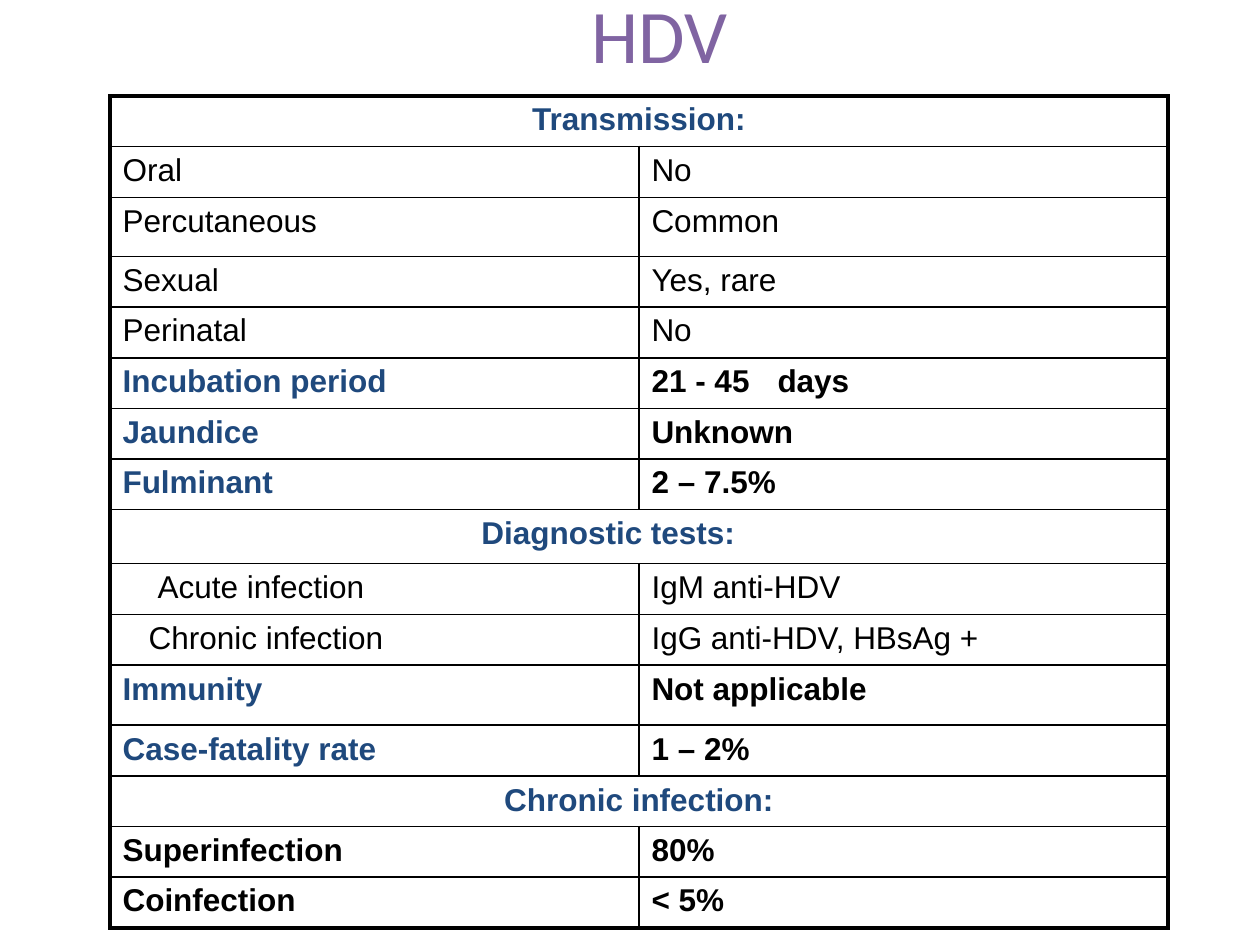
import pptx
import pptx.dml.color
import pptx.enum.text
import pptx.oxml
import pptx.oxml.ns
import pptx.util

SCALE = 914400 // 126
BLUE, BLACK, PURPLE = "1F497D", "000000", "8064A2"
THIN, THICK = 1, 2.25
CENTER = pptx.enum.text.PP_ALIGN.CENTER
MIDDLE = pptx.enum.text.MSO_ANCHOR.MIDDLE
COLUMN_WIDTH = 529
ROW_EDGES = [0, 50, 101, 160, 210, 261, 311, 361, 412,
             466, 517, 567, 627, 678, 728, 778, 829]
HEADING, DETAIL, FACT, OUTCOME = "heading", "detail", "fact", "outcome"
STYLES = {
    HEADING: (BLUE, BLUE, True),
    DETAIL: (BLACK, BLACK, False),
    FACT: (BLUE, BLACK, True),
    OUTCOME: (BLACK, BLACK, True),
}
ROWS = [
    (HEADING, "Transmission:"),
    (DETAIL, "Oral", "No"),
    (DETAIL, "Percutaneous", "Common"),
    (DETAIL, "Sexual", "Yes, rare"),
    (DETAIL, "Perinatal", "No"),
    (FACT, "Incubation period", "21 - 45\tdays"),
    (FACT, "Jaundice", "Unknown"),
    (FACT, "Fulminant", "2 – 7.5%"),
    (HEADING, "Diagnostic tests:\t"),
    (DETAIL, "Acute infection", "IgM anti-HDV"),
    (DETAIL, "Chronic infection", "IgG anti-HDV, HBsAg +"),
    (FACT, "Immunity", "Not applicable"),
    (FACT, "Case-fatality rate", "1 – 2%"),
    (HEADING, "Chronic infection:"),
    (OUTCOME, "Superinfection", "80%"),
    (OUTCOME, "Coinfection", "< 5%"),
]
INDENTS = {"Acute infection": 35, "Chronic infection": 26}


def px(length):
    """Turn whole pixels into EMU."""
    return pptx.util.Emu(length * SCALE)


def color(hex_value):
    """Turn a hex string into a colour."""
    return pptx.dml.color.RGBColor.from_string(hex_value)


def add_run(paragraph, text, font, size, hex_value, bold=False):
    """Add one styled run to a paragraph."""
    run = paragraph.add_run()
    run.text = text
    run.font.name = font
    run.font.size = pptx.util.Pt(size)
    run.font.bold = bold
    run.font.color.rgb = color(hex_value)


def set_borders(cell, widths):
    """Draw the left, right, top and bottom lines of a cell."""
    properties = cell._tc.get_or_add_tcPr()
    for position, (side, width) in enumerate(zip("LRTB", widths)):
        line = pptx.oxml.parse_xml(
            f'<a:ln{side} {pptx.oxml.ns.nsdecls("a")} w="{pptx.util.Pt(width)}">'
            f'<a:solidFill><a:srgbClr val="{BLACK}"/></a:solidFill></a:ln{side}>')
        properties.insert(position, line)


def add_title(slide, left, top, width, height):
    """Place the centred title in its box."""
    frame = slide.shapes.add_textbox(px(left), px(top), px(width), px(height)).text_frame
    frame.word_wrap = True
    frame.vertical_anchor = MIDDLE
    paragraph = frame.paragraphs[0]
    paragraph.alignment = CENTER
    add_run(paragraph, "HDV", "Calibri", 43.2, PURPLE)


def fill_cell(cell, text, hex_value, bold, centered):
    """Write the text of one cell."""
    paragraph = cell.text_frame.paragraphs[0]
    if centered:
        paragraph.alignment = CENTER
    if text in INDENTS:
        paragraph._p.get_or_add_pPr().set("marL", str(px(INDENTS[text])))
    add_run(paragraph, text, "Arial", 18, hex_value, bold)


def add_facts_table(slide, left, top):
    """Place the table of virus facts at a corner."""
    last = len(ROWS) - 1
    table = slide.shapes.add_table(
        len(ROWS), 2, px(left), px(top), px(2 * COLUMN_WIDTH), px(ROW_EDGES[-1])).table
    table.first_row = table.horz_banding = False
    for column in table.columns:
        column.width = px(COLUMN_WIDTH)
    for index, (kind, *texts) in enumerate(ROWS):
        table.rows[index].height = px(ROW_EDGES[index + 1] - ROW_EDGES[index])
        top_line = THICK if index == 0 else THIN
        bottom_line = THICK if index == last else THIN
        merged = kind == HEADING
        label_color, value_color, bold = STYLES[kind]
        cells = [table.cell(index, 0), table.cell(index, 1)]
        if merged:
            cells[0].merge(cells[1])
        for cell, left_line, right_line in zip(
                cells, (THICK, THIN), (THICK if merged else THIN, THICK)):
            cell.fill.background()
            set_borders(cell, (left_line, right_line, top_line, bottom_line))
        for cell, text, hex_value in zip(cells, texts, (label_color, value_color)):
            fill_cell(cell, text, hex_value, bold, merged)


def main():
    """Build and save the presentation."""
    presentation = pptx.Presentation()
    presentation.slide_width = px(1260)
    presentation.slide_height = px(945)
    slide = presentation.slides.add_slide(presentation.slide_layouts[6])
    add_title(slide, 171, 0, 977, 66)
    add_facts_table(slide, 110, 96)
    presentation.save("out.pptx")


if __name__ == "__main__":
    main()
